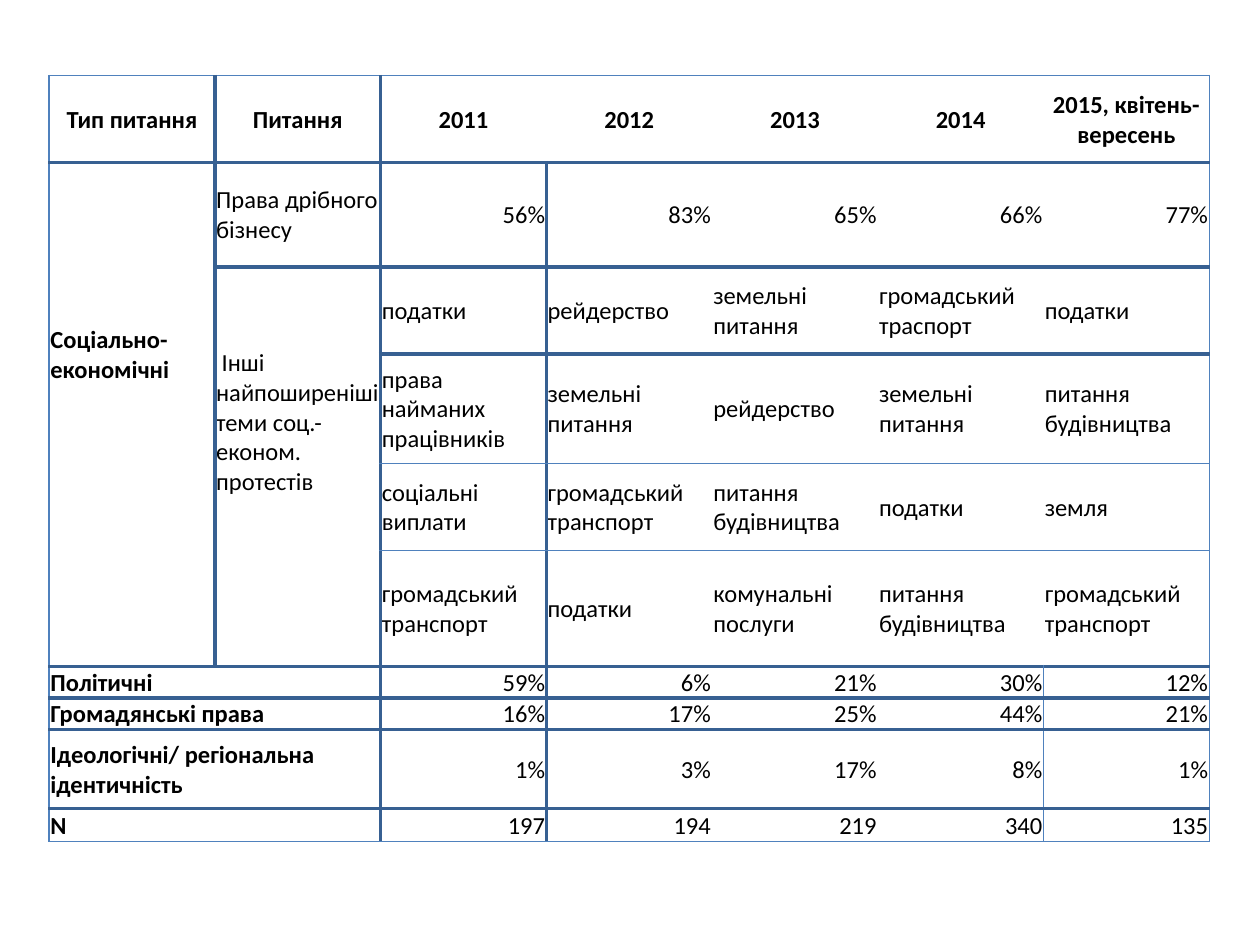
from lxml import etree
from pptx import Presentation
from pptx.dml.color import RGBColor
from pptx.enum import text
from pptx.oxml import ns
from pptx.util import Inches, Pt

COLORS = {"ink": "000000", "paper": "FFFFFF", "heavy": "376092", "light": "4F81BD"}
HEAVY, LIGHT = ("heavy", 2.25), ("light", 1)

COLUMN_WIDTH = 9.21 / 7
ROW_HEIGHTS = [0.69, 0.83, 0.69, 0.87, 0.69, 0.92, 0.25, 0.25, 0.63, 0.26]
ROWS = [
    ["Тип питання", "Питання", "2011", "2012", "2013", "2014", "2015, квітень-вересень"],
    ["Соціально-економічні", "Права дрібного бізнесу", "56%", "83%", "65%", "66%", "77%"],
    ["", " Інші найпоширеніші теми соц.-економ. протестів", "податки", "рейдерство",
     "земельні питання", "громадський траспорт", "податки"],
    ["", "", "права найманих працівників", "земельні питання", "рейдерство",
     "земельні питання", "питання будівництва"],
    ["", "", "соціальні виплати", "громадський транспорт", "питання будівництва",
     "податки", "земля"],
    ["", "", "громадський транспорт", "податки", "комунальні послуги",
     "питання будівництва", "громадський транспорт"],
    ["Політичні", "", "59%", "6%", "21%", "30%", "12%"],
    ["Громадянські права", "", "16%", "17%", "25%", "44%", "21%"],
    ["Ідеологічні/ регіональна ідентичність", "", "1%", "3%", "17%", "8%", "1%"],
    ["N", "", "197", "194", "219", "340", "135"],
]
FIRST_TOTAL = 6  # first row whose label spans two columns
# First and last cell of each merged area
SPANS = [((1, 0), (5, 0)), ((2, 1), (5, 1))]
SPANS += [((row, 0), (row, 1)) for row in range(FIRST_TOTAL, len(ROWS))]
# Bottom margins that lift the text of the tall cells
LIFTS = {(1, 0): 0.95, (2, 1): 0.71}


def vertical_rule(edge, row):
    """Line on a column edge (0 to 7) beside the given row."""
    if edge in (0, 7) or (edge == 6 and row >= FIRST_TOTAL):
        return LIGHT
    heavy = edge == 2 or (edge == 1 and row < FIRST_TOTAL) or (edge == 3 and row > 0)
    return HEAVY if heavy else None


def horizontal_rule(edge, column):
    """Line on a row edge (0 to 10) in the given column."""
    if column < 2 and 2 + column <= edge < FIRST_TOTAL:
        return None
    return LIGHT if edge in (0, 4, 5, len(ROWS)) else HEAVY


class Slide:
    font, size = "Calibri", 14

    def __init__(self, deck):
        self.page = deck.slides.add_slide(deck.slide_layouts[6])

    def border(self, cell, side, rule):
        properties = cell._tc.get_or_add_tcPr()
        line = etree.SubElement(properties, ns.qn(f"a:ln{side}"))
        if rule is None:
            etree.SubElement(line, ns.qn("a:noFill"))
            return
        color, width = rule
        line.set("w", str(Pt(width)))
        fill = etree.SubElement(line, ns.qn("a:solidFill"))
        etree.SubElement(fill, ns.qn("a:srgbClr"), val=COLORS[color])

    def cell(self, cell, wording, align, bold, lift):
        cell.margin_left = cell.margin_right = cell.margin_top = Inches(0.01)
        cell.margin_bottom = Inches(lift)
        cell.vertical_anchor = text.MSO_ANCHOR.MIDDLE
        cell.fill.solid()
        cell.fill.fore_color.rgb = RGBColor.from_string(COLORS["paper"])
        cell.text_frame.text = wording
        para = cell.text_frame.paragraphs[0]
        para.alignment = align
        para.font.size = Pt(self.size)
        for span in para.runs:
            span.font.name = self.font
            span.font.size = Pt(self.size)
            span.font.bold = bold
            span.font.color.rgb = RGBColor.from_string(COLORS["ink"])

    def table(self, left, top):
        count = len(ROWS[0])
        frame = self.page.shapes.add_table(
            len(ROWS), count, Inches(left), Inches(top),
            Inches(COLUMN_WIDTH * count), Inches(sum(ROW_HEIGHTS)))
        table = frame.table
        table.first_row = table.horz_banding = False
        for column in table.columns:
            column.width = Inches(COLUMN_WIDTH)
        for row, height in zip(table.rows, ROW_HEIGHTS):
            row.height = Inches(height)

        for r, words in enumerate(ROWS):
            for c, wording in enumerate(words):
                cell = table.cell(r, c)
                # Borders go before the fill
                self.border(cell, "L", vertical_rule(c, r))
                self.border(cell, "R", vertical_rule(c + 1, r))
                self.border(cell, "T", horizontal_rule(r, c))
                self.border(cell, "B", horizontal_rule(r + 1, c))
                if r == 0:
                    align = text.PP_ALIGN.CENTER
                elif wording.rstrip("%").isdigit():
                    align = text.PP_ALIGN.RIGHT
                else:
                    align = text.PP_ALIGN.LEFT
                self.cell(cell, wording, align, r == 0 or c == 0, LIFTS.get((r, c), 0))

        for first, last in SPANS:
            table.cell(*first).merge(table.cell(*last))


def main():
    deck = Presentation()
    deck.slide_width, deck.slide_height = Inches(10), Inches(7.5)
    # Protest topics by year
    Slide(deck).table(0.39, 0.6)
    deck.save("out.pptx")


if __name__ == "__main__":
    main()
